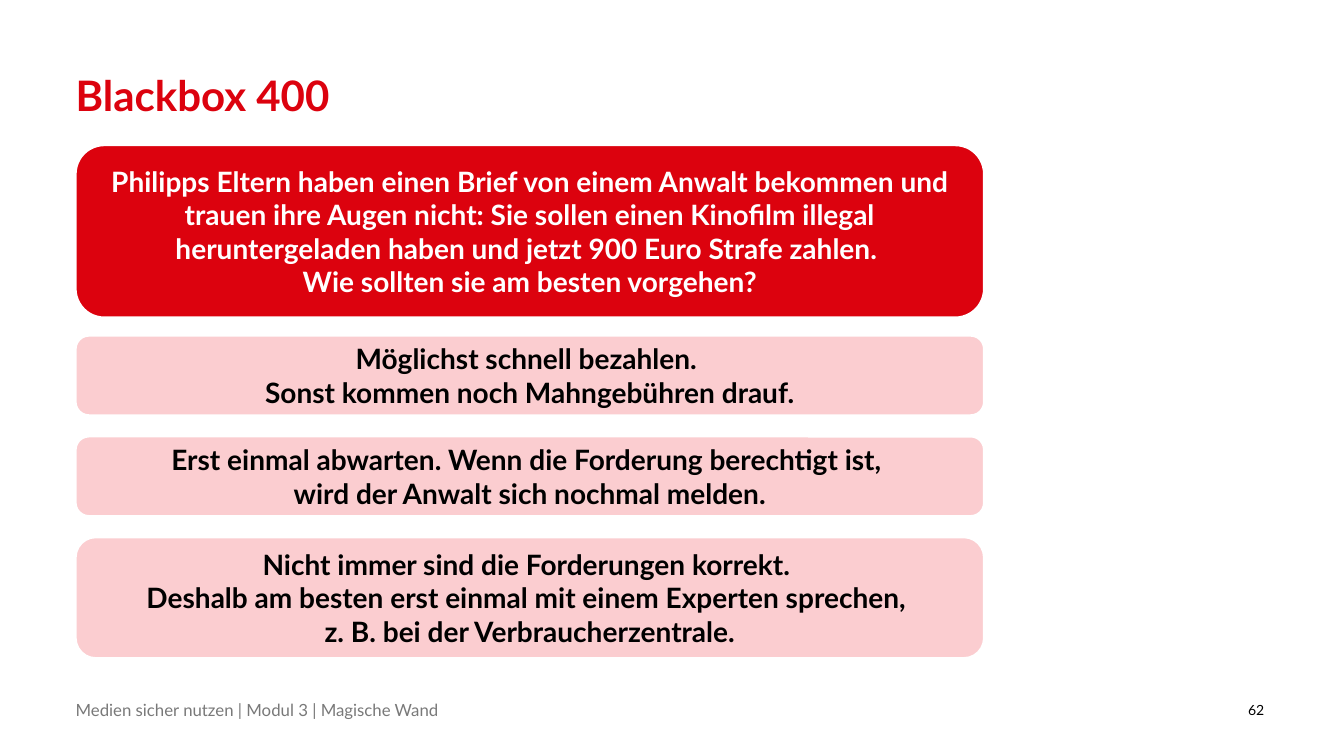
from lxml import etree
from pptx import Presentation
from pptx.dml.color import RGBColor
from pptx.enum.shapes import MSO_SHAPE
from pptx.enum.text import MSO_ANCHOR, PP_ALIGN
from pptx.oxml.ns import qn
from pptx.util import Inches, Pt

RED = RGBColor(0xDC, 0x02, 0x0E)
PINK = RGBColor(0xFB, 0xC1, 0xC5)
GREY = RGBColor(0x79, 0x79, 0x79)
BLACK = RGBColor(0, 0, 0)
WHITE = RGBColor(0xFF, 0xFF, 0xFF)
LEFT, CENTER, RIGHT = PP_ALIGN.LEFT, PP_ALIGN.CENTER, PP_ALIGN.RIGHT
TOP, MIDDLE = MSO_ANCHOR.TOP, MSO_ANCHOR.MIDDLE
ROUNDED = MSO_SHAPE.ROUNDED_RECTANGLE

MARGIN = 0.75
CARD_WIDTH = 9.01
QUESTION = (
    "Philipps Eltern haben einen Brief von einem Anwalt bekommen und "
    "trauen ihre Augen nicht: Sie sollen einen Kinofilm illegal "
    "heruntergeladen haben und jetzt 900 Euro Strafe zahlen. \n"
    "Wie sollten sie am besten vorgehen?"
)
ANSWERS = [
    (0.79, "Möglichst schnell bezahlen. \n"
           "Sonst kommen noch Mahngebühren drauf."),
    (0.79, "Erst einmal abwarten. Wenn die Forderung berechtigt ist, \n"
           "wird der Anwalt sich nochmal melden."),
    (1.2, "Nicht immer sind die Forderungen korrekt. \n"
          "Deshalb am besten erst einmal mit einem Experten sprechen, \n"
          "z. B. bei der Verbraucherzentrale."),
]


class QuizSlide:
    """Holds the slide and its style, and adds labels and quiz cards."""

    font = "Lato"

    def __init__(self, prs):
        self.slide = prs.slides.add_slide(prs.slide_layouts[6])

    def set_text(self, sp, text, size, color, bold, align, anchor):
        tf = sp.text_frame
        tf.word_wrap = True
        tf.vertical_anchor = anchor
        p = tf.paragraphs[0]
        p.text = text
        p.alignment = align
        for r in p.runs:
            r.font.name = self.font
            r.font.size = Pt(size)
            r.font.bold = bold
            r.font.color.rgb = color
        return p

    def label(self, x, y, w, h, text, size, color, bold=False,
              align=LEFT, anchor=MIDDLE):
        sp = self.slide.shapes.add_textbox(
            Inches(x), Inches(y), Inches(w), Inches(h))
        tf = sp.text_frame
        tf.margin_left = tf.margin_right = 0
        tf.margin_top = tf.margin_bottom = 0
        return self.set_text(sp, text, size, color, bold, align, anchor)

    def card(self, y, h, text, fill, color, opacity=100):
        sp = self.slide.shapes.add_shape(
            ROUNDED, Inches(MARGIN), Inches(y), Inches(CARD_WIDTH), Inches(h))
        sp.shadow.inherit = False
        sp.fill.solid()
        sp.fill.fore_color.rgb = fill
        if opacity < 100:
            clr = sp.element.spPr.find(qn("a:solidFill"))[0]
            etree.SubElement(clr, qn("a:alpha"), val=str(opacity * 1000))
        sp.line.color.rgb = WHITE
        sp.line.width = Pt(1.5)
        self.set_text(sp, text, 20, color, True, CENTER, MIDDLE)


def main():
    prs = Presentation()
    prs.slide_width, prs.slide_height = Inches(13.33), Inches(7.5)
    s = QuizSlide(prs)
    title = s.label(MARGIN, 0.75, 11.81, 0.46, "Blackbox 400", 30, RED,
                    bold=True, anchor=TOP)
    title.line_spacing = 0.9
    s.label(MARGIN, 6.96, 9.84, 0.16,
            "Medien sicher nutzen | Modul 3 | Magische Wand", 12, GREY)
    s.label(11.84, 6.96, 0.7, 0.16, "62", 10, BLACK, align=RIGHT)
    s.card(1.44, 1.71, QUESTION, RED, WHITE)
    for i, (height, answer) in enumerate(ANSWERS):
        s.card(3.33 + i, height, answer, PINK, BLACK, opacity=80)
    prs.save("out.pptx")


if __name__ == "__main__":
    main()
